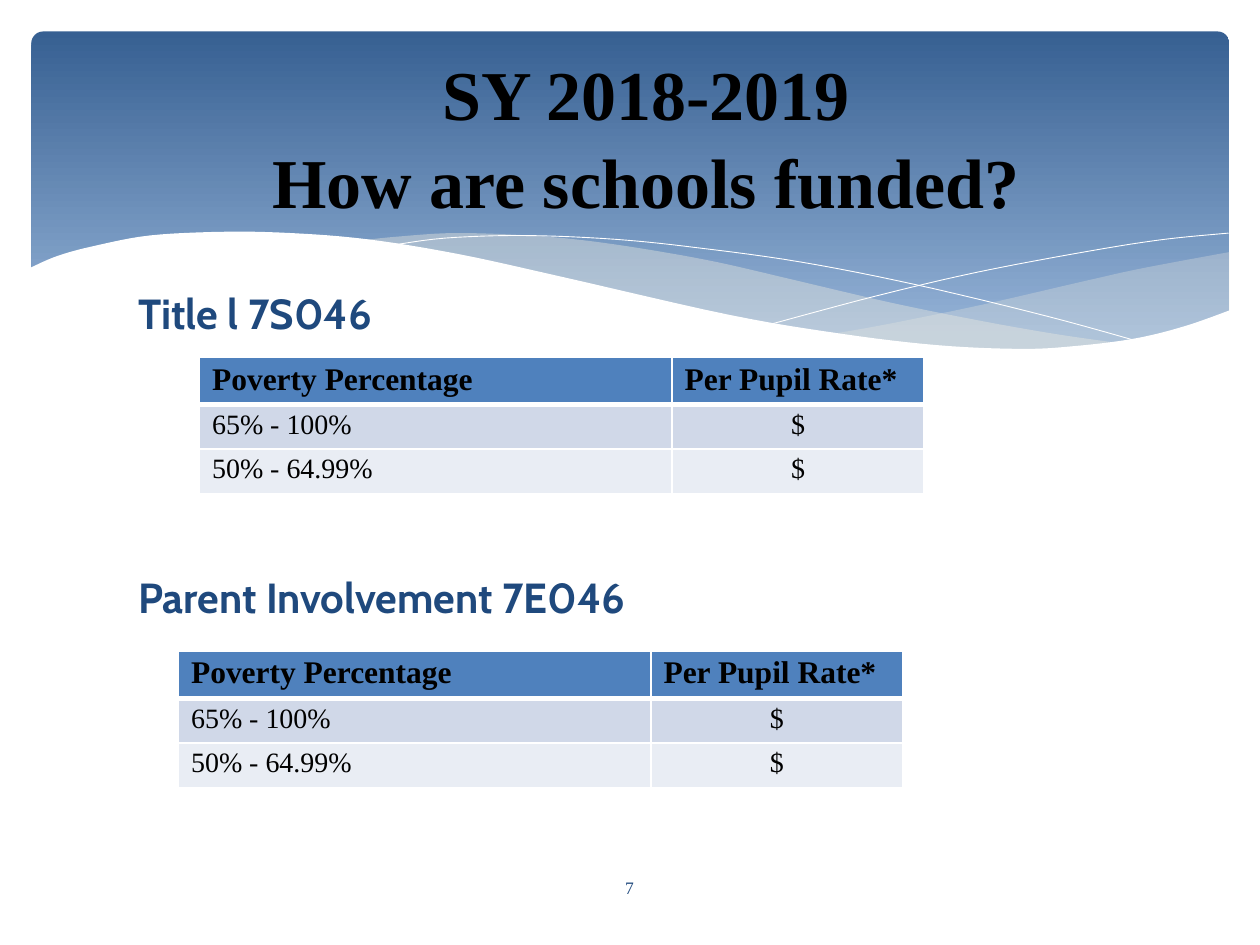
import pptx
import pptx.dml.color
import pptx.enum.shapes
import pptx.enum.text
import pptx.oxml
import pptx.oxml.ns
import pptx.util

Pt = pptx.util.Pt
ALIGN = pptx.enum.text.PP_ALIGN
ANCHOR = pptx.enum.text.MSO_ANCHOR
SERIF = "Times New Roman"
NAVY, WHITE, BLACK, CREAM = "1F497D", "FFFFFF", "000000", "EEECE1"

# Wave edges as points that a smooth curve runs through
RIGHT_UPPER = [(702.7, 144), (652.3, 153.4), (619.9, 160.6), (560.9, 174.2),
               (508.3, 185), (475.9, 190.8)]
RIGHT_LOWER = [(475.9, 190.8), (517.7, 195.8), (553.7, 199.4), (586.1, 200.2),
               (621.4, 198), (651.6, 193.7), (678.2, 186.5), (702.7, 177.8)]
LEFT_UPPER = [(643, 196.6), (602.6, 190.8), (558, 182.9), (508.3, 172.8),
              (452.9, 159.8), (409.7, 149.8), (370.1, 142.6), (334.8, 137.5),
              (302.4, 134.6), (259.9, 133.2), (225.4, 135.4), (205.9, 137.5)]
LEFT_LOWER = [(205.9, 137.5), (246.2, 143.3), (290.9, 151.9), (323.3, 159.8),
              (381.6, 172.8), (432.7, 183.6), (478.8, 191.5), (519.8, 197.3),
              (556.6, 199.4), (589, 200.2), (617, 199.4), (643, 196.6)]
FALLING_LINE = [(222.5, 140.4), (254.2, 136.1), (299.5, 134.6), (352.1, 136.8),
                (400.3, 141.8), (457.9, 149.8), (523.4, 162.7), (598.3, 180.7),
                (653, 195.8)]
RISING_LINE = [(441.4, 185), (500.4, 169.2), (558.7, 155.5), (623.5, 143.3),
               (665.3, 136.8), (702, 133.2)]
PAGE_EDGE = [(703.4, 177.1), (676.8, 186.5), (647.3, 193.7), (612, 198),
             (582.5, 199.4), (535.7, 197.3), (481, 190.8), (416.9, 180),
             (321.8, 158.4), (262.8, 145.4), (210.2, 136.8), (165.6, 133.2),
             (127.4, 132.5), (85.7, 134.6), (54.7, 140.4), (33.1, 146.2),
             (16.6, 153.4)]
PAGE_BOTTOM = [(16.6, 236.9), (703.4, 236.9)]

FUNDING_ROWS = [("Poverty Percentage", "Per Pupil Rate*"),
                ("65% - 100%", "$"),
                ("50% - 64.99%", "$")]
ROW_FILLS = ["4F81BD", "D0D8E8", "E9EDF4"]


def color(hex_string):
    return pptx.dml.color.RGBColor.from_string(hex_string)


def smooth_curve(points, steps=6):
    """Sample a Catmull-Rom curve through the points."""
    padded = [points[0], *points, points[-1]]
    curve = [points[0]]
    for a, b, c, d in zip(padded, padded[1:], padded[2:], padded[3:]):
        for step in range(1, steps + 1):
            t = step / steps
            curve.append(tuple(
                q + 0.5 * t * (r - p + t * (2 * p - 5 * q + 4 * r - s
                                            + t * (3 * (q - r) + s - p)))
                for p, q, r, s in zip(a, b, c, d)))
    return curve


def add_wave(slide, points, fill=None, opacity=100, line=None):
    vertices = [(Pt(x), Pt(y)) for x, y in points]
    builder = slide.shapes.build_freeform(*vertices[0])
    builder.add_line_segments(vertices[1:], close=fill is not None)
    shape = builder.convert_to_shape()
    shape.shadow.inherit = False
    if fill:
        shape.fill.solid()
        shape.fill.fore_color.rgb = color(fill)
        if opacity < 100:
            color_element = shape.fill._xPr.find(".//" + pptx.oxml.ns.qn("a:srgbClr"))
            color_element.append(pptx.oxml.parse_xml(
                f'<a:alpha {pptx.oxml.ns.nsdecls("a")} val="{opacity * 1000}"/>'))
    else:
        shape.fill.background()
    if line:
        shape.line.color.rgb = color(line)
        shape.line.width = Pt(0.5)
    else:
        shape.line.fill.background()


def add_banner(slide):
    shape = slide.shapes.add_shape(
        pptx.enum.shapes.MSO_SHAPE.ROUNDED_RECTANGLE,
        Pt(18), Pt(18), Pt(684.5), Pt(194.4))
    shape.adjustments[0] = 0.034
    shape.shadow.inherit = False
    shape.line.fill.background()
    shape.fill.gradient()
    shape.fill.gradient_angle = 270
    for stop, position, hex_string in zip(
            shape.fill.gradient_stops, (0, 0.9), ("376092", "95B3D7")):
        stop.position = position
        stop.color.rgb = color(hex_string)


def write_text(text_frame, text, size, font=SERIF, fill=BLACK, bold=False,
               align=ALIGN.LEFT, anchor=ANCHOR.TOP, line_spacing=None):
    text_frame.word_wrap = True
    text_frame.vertical_anchor = anchor
    paragraph = text_frame.paragraphs[0]
    paragraph.text = text
    paragraph.alignment = align
    paragraph.line_spacing = line_spacing
    for run in paragraph.runs:
        run.font.size = Pt(size)
        run.font.name = font
        run.font.bold = bold
        run.font.color.rgb = color(fill)


def add_text(slide, text, left, top, width, height, **text_format):
    box = slide.shapes.add_textbox(Pt(left), Pt(top), Pt(width), Pt(height))
    write_text(box.text_frame, text, **text_format)


def set_borders(cell, **widths):
    properties = cell._tc.get_or_add_tcPr()
    for side in "LRTB":
        properties.append(pptx.oxml.parse_xml(
            f'<a:ln{side} {pptx.oxml.ns.nsdecls("a")} w="{Pt(widths.get(side, 1))}">'
            f'<a:solidFill><a:srgbClr val="{WHITE}"/></a:solidFill></a:ln{side}>'))


def add_funding_table(slide, left, top):
    table = slide.shapes.add_table(3, 2, Pt(left), Pt(top), Pt(414), Pt(76.2)).table
    for column, width in zip(table.columns, (270, 144)):
        column.width = Pt(width)
    for row_index, values in enumerate(FUNDING_ROWS):
        header = row_index == 0
        for column_index, value in enumerate(values):
            cell = table.cell(row_index, column_index)
            cell.margin_top = cell.margin_bottom = Pt(2.8)
            set_borders(cell, B=3 if header else 1, T=3 if row_index == 1 else 1)
            cell.fill.solid()
            cell.fill.fore_color.rgb = color(ROW_FILLS[row_index])
            write_text(cell.text_frame, value, size=18 if header else 16, bold=header,
                       align=ALIGN.CENTER if value == "$" else ALIGN.LEFT)


def main():
    presentation = pptx.Presentation()
    presentation.slide_width, presentation.slide_height = Pt(720), Pt(540)
    slide = presentation.slides.add_slide(presentation.slide_layouts[6])

    # Banner with waves
    add_banner(slide)
    add_wave(slide, smooth_curve(RIGHT_UPPER) + smooth_curve(RIGHT_LOWER),
             fill=CREAM, opacity=29)
    add_wave(slide, smooth_curve(LEFT_UPPER) + smooth_curve(LEFT_LOWER),
             fill=CREAM, opacity=40)
    for points in (FALLING_LINE, RISING_LINE):
        add_wave(slide, smooth_curve(points), line=WHITE)
    add_wave(slide, smooth_curve(PAGE_EDGE) + PAGE_BOTTOM, fill=WHITE)

    # Title
    add_text(slide, "SY 2018-2019\vHow are schools funded?", 36, 20, 666, 114,
             size=40, bold=True, align=ALIGN.CENTER, anchor=ANCHOR.MIDDLE,
             line_spacing=1.05)

    # Funding sources: heading and table
    for heading, heading_top, table_left, table_top in (
            ("Title l 7S046", 160.6, 114, 204),
            ("Parent Involvement 7E046", 322.9, 102, 372)):
        add_text(slide, heading, 72, heading_top, 360, 36.4,
                 size=24, font="Cabin", fill=NAVY, bold=True)
        add_funding_table(slide, table_left, table_top)

    # Slide number
    add_text(slide, "7", 314, 492.5, 91.4, 28.8, size=10, fill=NAVY,
             align=ALIGN.CENTER, anchor=ANCHOR.MIDDLE)

    presentation.save("out.pptx")


if __name__ == "__main__":
    main()
